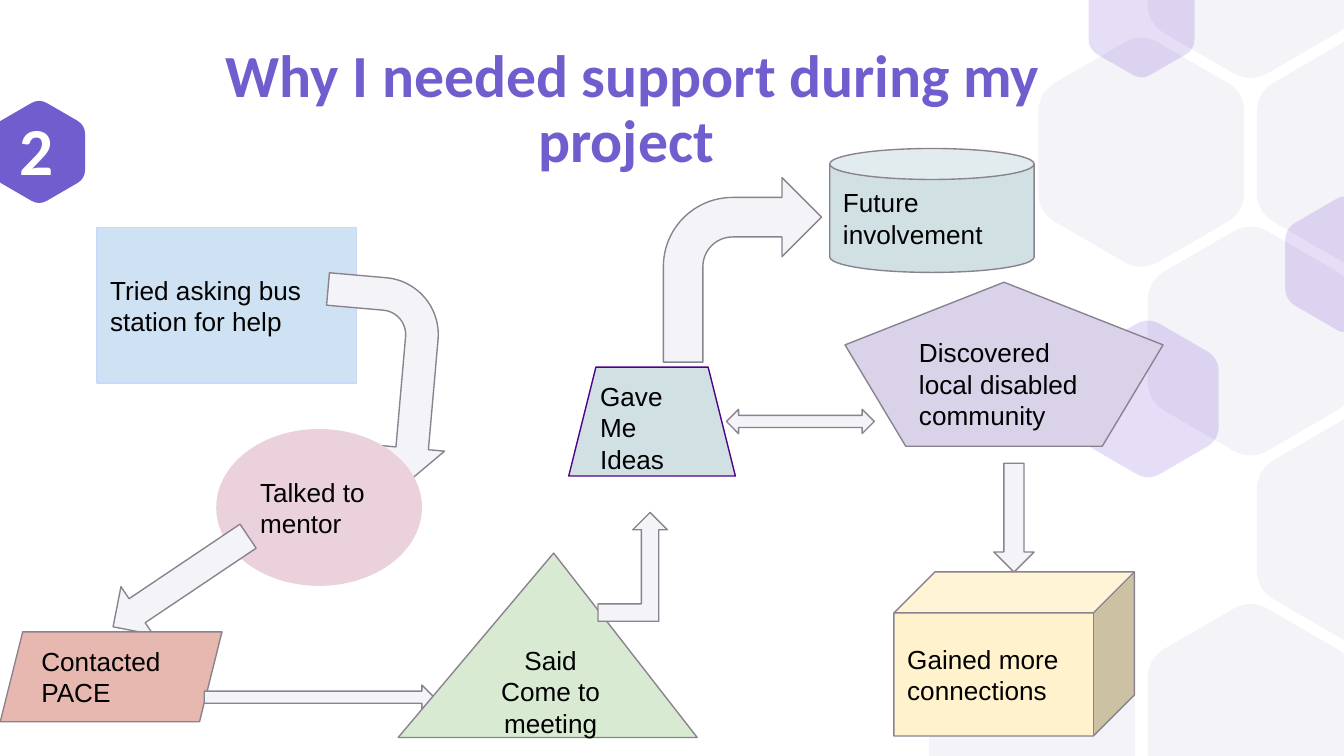
from lxml.etree import SubElement
from pptx import Presentation
from pptx.dml.color import RGBColor
from pptx.enum.shapes import MSO_SHAPE as Kind
from pptx.enum.text import MSO_ANCHOR as Anchor, PP_ALIGN as Align
from pptx.oxml.ns import qn
from pptx.util import Pt

WIDE, HIGH = 720, 405
GREY, EDGE, VIOLET, TINT = "F4F3F8", "89828F", "725DCF", "5322C9"

deck = Presentation()
deck.slide_width, deck.slide_height = Pt(WIDE), Pt(HIGH)
slide = deck.slides.add_slide(deck.slide_layouts[6])
shapes = slide.shapes


def paint(part, color):
    """Give a fill or a font one solid colour."""
    part.solid()
    part.fore_color.rgb = RGBColor.from_string(color)


def write(shape, words, style, color, inset=7.2, anchor=Anchor.MIDDLE, align=Align.LEFT):
    frame = shape.text_frame
    look = {"word_wrap": True, "vertical_anchor": anchor}
    for side in ("left", "top", "right", "bottom"):
        look["margin_" + side] = Pt(inset)
    for name, value in look.items():
        setattr(frame, name, value)
    para = frame.paragraphs[0]
    para.text, para.alignment = words, align
    for name, value in style.items():
        setattr(para.font, name, value)
    paint(para.font.fill, color)
    return para


# Rounded hexagons: a honeycomb of light cells, then tints and the badge
STEP_X, STEP_Y = 58.55, 101.1
cells = [(2, 0), (1, 1), (3, 1), (2, 2), (3, 3), (0, 4), (2, 4)]
hexes = [(497.7 + STEP_X * col, -80.5 + STEP_Y * row, 110.3, GREY, 100) for col, row in cells]
hexes += [
    (688.5, 105.2, 65.8, TINT, 15),
    (561.8, 310.3, 40, TINT, 15),
    (583.2, -21.5, 56.8, TINT, 15),
    (577.4, 172, 75.5, TINT, 15),
    (-3.6, 54.2, 49.2, VIOLET, 100),
]
CORNERS = [(0.5, -0.025), (1, 0.237), (1, 0.763), (0.5, 1.025), (0, 0.763), (0, 0.237)]
ROUND = 0.17

for left, top, width, color, alpha in hexes:
    spots = [(left + x * width, top + y * width * 1.106) for x, y in CORNERS]
    dots, bends = [], []
    for i, here in enumerate(spots):
        if 0 <= here[1] + 4 and here[1] - 4 <= HIGH:
            start, end = (
                [h + ROUND * (n - h) for h, n in zip(here, spots[j])]
                for j in (i - 1, (i + 1) % 6)
            )
            crest = [h / 2 + (s + e) / 4 for h, s, e in zip(here, start, end)]
            bends.append(len(dots))
            dots += [start, crest, end]
        elif i % 3:  # a side cut off by the slide edge
            dots.append((here[0], min(max(here[1], 0), HIGH)))
    dots = [(Pt(x), Pt(y)) for x, y in dots]
    pen = shapes.build_freeform(*dots[0])
    pen.add_line_segments(dots[1:])
    cell = pen.convert_to_shape()

    # Turn each start, crest, end into one curve
    nodes = list(cell._element.find(".//" + qn("a:path")))
    for i in bends:
        first, crest, end = (
            [int(node[0].get(axis)) for axis in "xy"] for node in nodes[i:i + 3]
        )
        tip = [2 * c - (s + e) / 2 for s, c, e in zip(first, crest, end)]
        curve = nodes[i + 2]
        curve.clear()
        curve.tag = qn("a:cubicBezTo")
        for base, share in ((first, 2 / 3), (end, 2 / 3), (end, 0)):
            x, y = (round(b + share * (t - b)) for b, t in zip(base, tip))
            SubElement(curve, qn("a:pt"), x=str(x), y=str(y))
        nodes[i + 1].getparent().remove(nodes[i + 1])
        nodes[i + 2] = curve

    cell.shadow.inherit = False
    cell.line.fill.background()
    paint(cell.fill, color)
    if alpha < 100:
        tone = cell.fill._xPr.find(".//" + qn("a:srgbClr"))
        SubElement(tone, qn("a:alpha"), val=str(alpha * 1000))

# Number and title
HEAD = {"name": "Calibri", "bold": True}
badge = shapes.add_textbox(Pt(3.2), Pt(50.7), Pt(61.9), Pt(58.3))
write(badge, "2", {**HEAD, "size": Pt(36)}, "FFFFFF", anchor=Anchor.TOP)
title = shapes.add_textbox(Pt(86.4), Pt(26.1), Pt(505.4), Pt(66.2))
line = write(title, "Why I needed support during my project ",
             {**HEAD, "size": Pt(32)}, VIOLET, inset=0, align=Align.CENTER)
line.line_spacing = 0.9

# Steps and block arrows, back to front: kind, box, turn, fill, line, words
BODY = {"name": "Arial", "size": Pt(14)}
steps = [
    (Kind.RECTANGLE, (51.9, 122, 139, 83.3), 0, "CFE2F3", "C9DAF8",
     "Tried asking bus station for help"),
    (Kind.BENT_ARROW, (152.9, 167.7, 107.3, 69.8), 95, GREY, EDGE, ""),
    (Kind.OVAL, (116.2, 230.2, 109.5, 83.3), 0, "EAD1DC", "EAD1DC", "Talked to mentor"),
    (Kind.RIGHT_ARROW, (53.2, 296, 87.1, 31), 146.1, GREY, EDGE, ""),
    (Kind.PARALLELOGRAM, (0.1, 338.5, 118.8, 48.2), 0, "E6B8AF", EDGE, "Contacted PACE"),
    (Kind.RIGHT_ARROW, (109.4, 367, 123.1, 13), 0, GREY, EDGE, ""),
    (Kind.ISOSCELES_TRIANGLE, (213.3, 296.3, 160.2, 98.8), 0, "D9EAD3", EDGE,
     "Said Come to meeting"),
    (Kind.BENT_UP_ARROW, (320.4, 274.5, 37.2, 58.3), 0, GREY, EDGE, ""),
    (Kind.TRAPEZOID, (304.7, 196.7, 89.3, 58.3), 0, "D0E0E3", "4F0089", "Gave Me Ideas"),
    (Kind.BENT_ARROW, (355.4, 95.2, 84.7, 98.8), 0, GREY, EDGE, ""),
    (Kind.CAN, (444.5, 79.6, 109.5, 66.4), 0, "D0E0E3", EDGE, "Future involvement"),
    (Kind.LEFT_RIGHT_ARROW, (389.2, 219.3, 79.2, 13), 0, GREY, EDGE, ""),
    (Kind.REGULAR_PENTAGON, (452.7, 151.2, 170.4, 87.9), 0, "D9D2E9", EDGE,
     "Discovered local disabled community"),
    (Kind.DOWN_ARROW, (532.4, 248.2, 21.6, 58.3), 0, GREY, EDGE, ""),
    (Kind.CUBE, (478.9, 306.4, 128.8, 87.9), 0, "FFF2CC", EDGE, "Gained more connections"),
]
for kind, box, turn, color, edge, words in steps:
    shape = shapes.add_shape(kind, *map(Pt, box))
    shape.shadow.inherit = False
    shape.rotation = turn
    paint(shape.fill, color)
    paint(shape.line.fill, edge)
    shape.line.width = Pt(0.75)
    peak = kind == Kind.ISOSCELES_TRIANGLE
    if peak:
        shape.adjustments[0] = 0.52
    if words:
        write(shape, words, BODY, "000000", align=Align.CENTER if peak else Align.LEFT)

deck.save("out.pptx")
